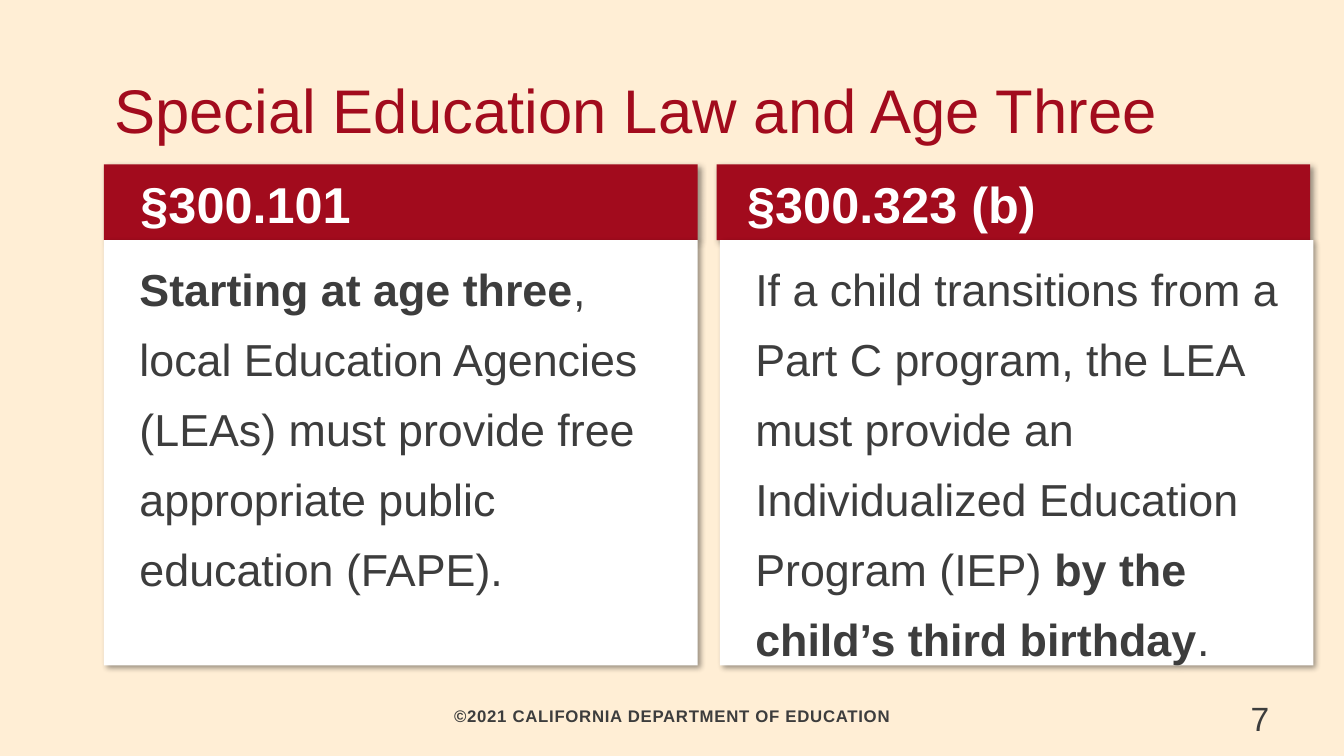
from lxml.etree import SubElement
from pptx import Presentation
from pptx.dml.color import RGBColor
from pptx.enum.text import MSO_ANCHOR, MSO_AUTO_SIZE, PP_ALIGN
from pptx.oxml.ns import qn
from pptx.util import Cm, Pt

COLORS = {"cream": "FFEED5", "red": "A20B1D", "white": "FFFFFF", "gray": "3D3D3D", "black": "000000"}


def write_text(shape, *parts, size, color="gray", align=PP_ALIGN.LEFT, anchor=MSO_ANCHOR.TOP,
               line_spacing=1.0, space_after=0, indent=0, tracking=0):
    frame = shape.text_frame
    frame.word_wrap = True
    frame.auto_size = MSO_AUTO_SIZE.NONE
    frame.vertical_anchor = anchor
    paragraph = frame.paragraphs[0]
    properties = paragraph._p.get_or_add_pPr()
    properties.set("marL", str(Cm(indent)))
    properties.set("indent", "0")
    SubElement(properties, qn("a:buNone"))
    paragraph.alignment = align
    paragraph.line_spacing = line_spacing
    paragraph.space_before = Pt(0)
    paragraph.space_after = Pt(space_after)
    for text, bold in parts:
        run = paragraph.add_run()
        run.text = text
        run.font.name = "Arial"
        run.font.size = Pt(size)
        run.font.bold = bold
        run.font.color.rgb = RGBColor.from_string(COLORS[color])
        if tracking:
            run._r.get_or_add_rPr().set("spc", str(tracking))


def style_panel(shape, left, top, height, fill):
    shape.left, shape.top, shape.width, shape.height = Cm(left), Cm(top), Cm(14.96), Cm(height)
    shape.fill.solid()
    shape.fill.fore_color.rgb = RGBColor.from_string(COLORS[fill])
    effects = SubElement(shape._element.spPr, qn("a:effectLst"))
    shadow = SubElement(effects, qn("a:outerShdw"), blurRad=str(Pt(4)), dist=str(Pt(3)),
                        dir="2700000", algn="tl", rotWithShape="0")
    shadow_color = SubElement(shadow, qn("a:srgbClr"), val=COLORS["black"])
    SubElement(shadow_color, qn("a:alpha"), val="40000")


presentation = Presentation()
presentation.slide_width, presentation.slide_height = Cm(33.87), Cm(19.05)
slide = presentation.slides.add_slide(presentation.slide_layouts[4])
slide.background.fill.solid()
slide.background.fill.fore_color.rgb = RGBColor.from_string(COLORS["cream"])

footer = slide.shapes.add_textbox(Cm(2.62), Cm(17.68), Cm(28.65), Cm(0.74))
write_text(footer, ("©2021 CALIFORNIA DEPARTMENT OF EDUCATION", True), size=12,
           align=PP_ALIGN.CENTER, anchor=MSO_ANCHOR.MIDDLE, line_spacing=0.95, tracking=50)

title = slide.shapes.title
title.left, title.top, title.width, title.height = Cm(2.62), Cm(0.64), Cm(30.48), Cm(3.18)
write_text(title, ("Special Education Law and Age Three", False), size=44, color="red",
           anchor=MSO_ANCHOR.BOTTOM, line_spacing=0.85)

sections = [
    ("§300.101", 2.62, 0.79, 2.62, 12, [
        ("Starting at age three", True),
        (", local Education Agencies (LEAs) must provide free appropriate public education (FAPE).", False),
    ]),
    ("§300.323 (b)", 18.06, 0.64, 18.14, 5, [
        ("If a child transitions from a Part C program, the LEA must provide an "
         "Individualized Education Program (IEP) ", False),
        ("by the child’s third birthday", True),
        (".", False),
    ]),
]
for index, (heading, heading_left, heading_indent, body_left, space_after, parts) in enumerate(sections):
    header = slide.placeholders[1 + 2 * index]
    style_panel(header, heading_left, 4.14, 1.91, "red")
    frame = header.text_frame
    frame.margin_left = frame.margin_right = frame.margin_bottom = Cm(0.13)
    frame.margin_top = Cm(0.05)
    write_text(header, (heading, True), size=36, color="white", anchor=MSO_ANCHOR.BOTTOM,
               line_spacing=0.9, space_after=5, indent=heading_indent)

    body = slide.placeholders[2 + 2 * index]
    style_panel(body, body_left, 6.05, 10.72, "white")
    write_text(body, *parts, size=32, line_spacing=Pt(50), space_after=space_after, indent=0.64)

page_number = slide.shapes.add_textbox(Cm(31.27), Cm(17.45), Cm(2.6), Cm(1.24))
write_text(page_number, ("7", False), size=24)

presentation.save("out.pptx")
